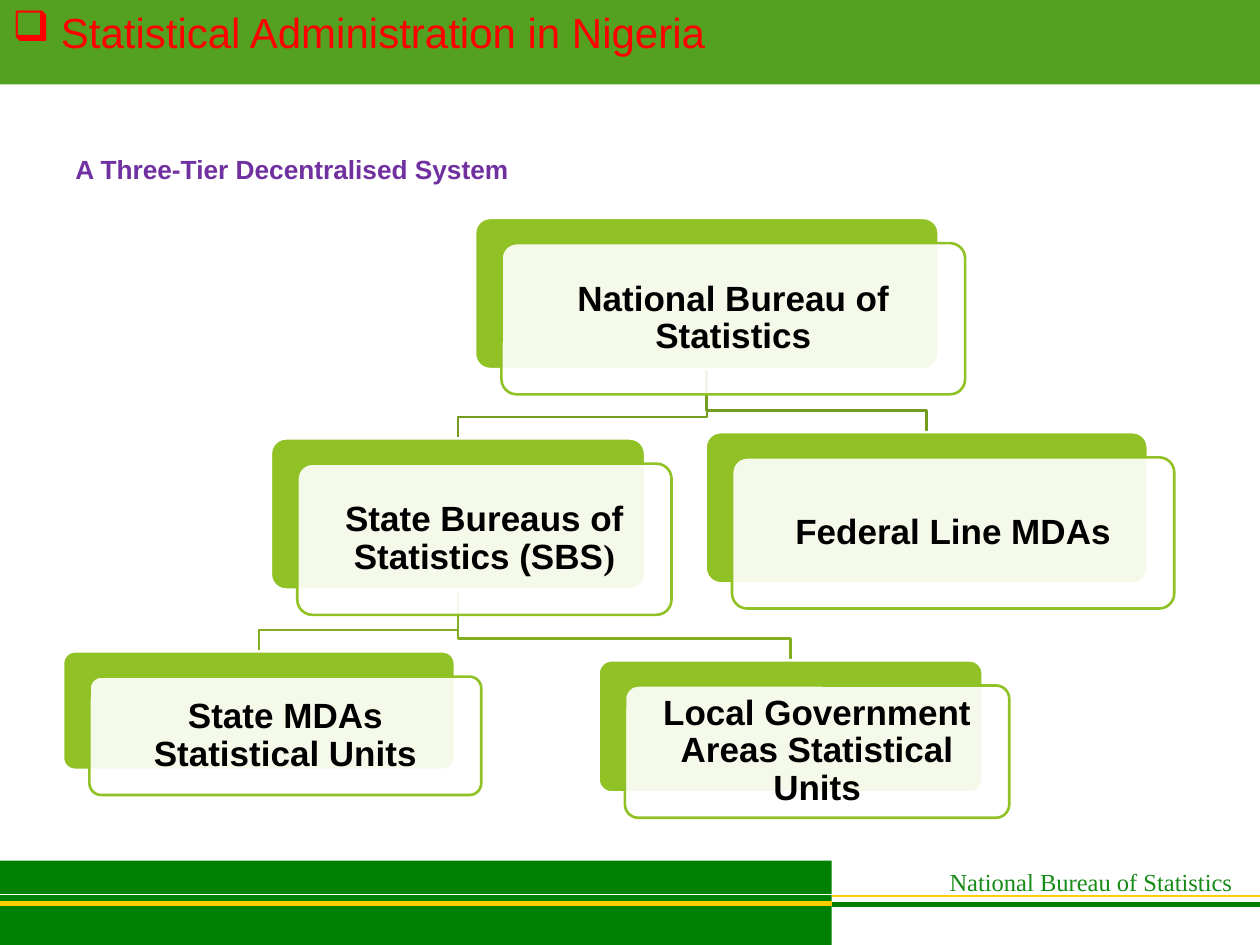
from dataclasses import dataclass

from lxml import etree
from pptx import Presentation
from pptx.dml.color import RGBColor
from pptx.enum.shapes import MSO_CONNECTOR, MSO_SHAPE
from pptx.enum.text import MSO_ANCHOR, PP_ALIGN
from pptx.oxml.ns import qn
from pptx.util import Inches, Pt

RECTANGLE = MSO_SHAPE.RECTANGLE
ROUNDED = MSO_SHAPE.ROUNDED_RECTANGLE
STRAIGHT = MSO_CONNECTOR.STRAIGHT
LEFT, CENTER = PP_ALIGN.LEFT, PP_ALIGN.CENTER
TOP, MIDDLE = MSO_ANCHOR.TOP, MSO_ANCHOR.MIDDLE

WHITE = RGBColor(0xFF, 0xFF, 0xFF)
BLACK = RGBColor(0x00, 0x00, 0x00)
RED = RGBColor(0xFF, 0x00, 0x00)
PURPLE = RGBColor(0x70, 0x30, 0xA0)
GOLD = RGBColor(0xFF, 0xCC, 0x00)
FOOTER_GREEN = RGBColor(0x00, 0x80, 0x00)
FOOTER_TEXT = RGBColor(0x17, 0x8B, 0x17)
TITLE_GREEN = RGBColor(0x54, 0xA0, 0x21)
CARD_GREEN = RGBColor(0x90, 0xC2, 0x26)
UPPER_LINK = RGBColor(0x73, 0x9B, 0x1E)
LOWER_LINK = RGBColor(0x83, 0xB0, 0x22)

CARD_SHIFT_X, CARD_SHIFT_Y = 0.21, 0.2
ELBOW_RISE = 0.17
CARD_INSET = Inches(0.08)


@dataclass(frozen=True)
class Card:
    left: float
    top: float
    width: float
    height: float
    runs: tuple[tuple[str, str], ...]

    @property
    def middle(self) -> float:
        return self.left + self.width / 2

    @property
    def bottom(self) -> float:
        return self.top + self.height


NATIONAL = Card(3.77, 1.73, 3.68, 1.2, (("National Bureau of Statistics", "Arial"),))
STATE = Card(2.15, 3.48, 2.97, 1.2,
             (("State Bureaus of Statistics (SBS", "Arial"), (")", "Times New Roman")))
STATE_UNITS = Card(0.5, 5.17, 3.11, 0.94, (("State MDAs Statistical Units", "Arial"),))
LOCAL_UNITS = Card(4.75, 5.24, 3.05, 1.05,
                   (("Local Government Areas Statistical Units", "Arial"),))
FEDERAL = Card(5.6, 3.43, 3.51, 1.2, (("Federal Line MDAs", "Arial"),))
CARDS = (NATIONAL, STATE, STATE_UNITS, LOCAL_UNITS, FEDERAL)
LINKS = (
    (NATIONAL, FEDERAL, UPPER_LINK),
    (STATE, LOCAL_UNITS, LOWER_LINK),
    (STATE, STATE_UNITS, LOWER_LINK),
    (NATIONAL, STATE, UPPER_LINK),
)


def add_block(slide, kind, left: float, top: float, width: float, height: float,
              fill: RGBColor, line: RGBColor | None = None):
    shape = slide.shapes.add_shape(kind, Inches(left), Inches(top),
                                   Inches(width), Inches(height))
    shape.shadow.inherit = False
    shape.fill.solid()
    shape.fill.fore_color.rgb = fill
    if line is None:
        shape.line.fill.background()
    else:
        shape.line.color.rgb = line
        shape.line.width = Pt(1.5)
    return shape


def write(paragraph, runs, size: int, color: RGBColor, bold: bool = False,
          alignment=LEFT) -> None:
    paragraph.alignment = alignment
    for text, font_name in runs:
        run = paragraph.add_run()
        run.text = text
        run.font.name = font_name
        run.font.size = Pt(size)
        run.font.bold = bold
        run.font.color.rgb = color


def add_rule(slide, start: float, end: float, y: float, color: RGBColor,
             width: int) -> None:
    rule = slide.shapes.add_connector(STRAIGHT, Inches(start), Inches(y),
                                      Inches(end), Inches(y))
    rule.line.color.rgb = color
    rule.line.width = Pt(width)
    etree.SubElement(rule._element.spPr, qn("a:effectLst"))


def add_label(slide, left: float, top: float, width: float, height: float):
    """Add a text box and return its first paragraph."""
    box = slide.shapes.add_textbox(Inches(left), Inches(top),
                                   Inches(width), Inches(height))
    box.text_frame.word_wrap = True
    return box.text_frame.paragraphs[0]


def add_footer(slide) -> None:
    add_block(slide, RECTANGLE, 0, 6.83, 6.6, 0.67, FOOTER_GREEN)
    add_rule(slide, 0, 6.6, 7.17, GOLD, 3)
    write(add_label(slide, 7.36, 6.83, 2.6, 0.14),
          [("National Bureau of Statistics", "Times New Roman")],
          14, FOOTER_TEXT, alignment=CENTER)
    add_rule(slide, 6.6, 10, 7.11, GOLD, 1)
    add_rule(slide, 6.6, 10, 7.18, FOOTER_GREEN, 3)
    add_rule(slide, 0, 6.6, 7.1, WHITE, 1)


def add_title(slide) -> None:
    bar = add_block(slide, RECTANGLE, 0, 0, 10, 0.67, TITLE_GREEN)
    bar.text_frame.vertical_anchor = TOP
    paragraph = bar.text_frame.paragraphs[0]
    properties = paragraph._p.get_or_add_pPr()
    properties.set("marL", str(Inches(0.3)))
    properties.set("indent", str(-Inches(0.3)))
    etree.SubElement(properties, qn("a:buChar"), char="❑")
    write(paragraph, [(" ", "Lato"), ("Statistical Administration in Nigeria", "Arial")],
          24, RED)


def add_link(slide, parent: Card, child: Card, color: RGBColor) -> None:
    """Draw the elbow from a parent's bottom to a child's top."""
    elbow = child.top - ELBOW_RISE
    builder = slide.shapes.build_freeform(Inches(parent.middle), Inches(parent.bottom))
    corners = ((parent.middle, elbow), (child.middle, elbow), (child.middle, child.top))
    builder.add_line_segments([(Inches(x), Inches(y)) for x, y in corners], close=False)
    link = builder.convert_to_shape()
    link.shadow.inherit = False
    link.fill.background()
    link.line.color.rgb = color
    link.line.width = Pt(1.5)


def add_card(slide, card: Card) -> None:
    """Draw a green plate with a translucent, labelled plate shifted over it."""
    back = add_block(slide, ROUNDED, card.left, card.top, card.width, card.height,
                     CARD_GREEN, WHITE)
    front = add_block(slide, ROUNDED, card.left + CARD_SHIFT_X, card.top + CARD_SHIFT_Y,
                      card.width, card.height, WHITE, CARD_GREEN)
    for plate in (back, front):
        plate.adjustments[0] = 0.1
    fill_color = front._element.spPr.find(qn("a:solidFill"))[0]
    etree.SubElement(fill_color, qn("a:alpha"), val="90000")

    frame = front.text_frame
    frame.word_wrap = True
    frame.vertical_anchor = MIDDLE
    frame.margin_left = frame.margin_right = CARD_INSET
    frame.margin_top = frame.margin_bottom = CARD_INSET
    paragraph = frame.paragraphs[0]
    paragraph.line_spacing = 0.9
    write(paragraph, card.runs, 20, BLACK, bold=True, alignment=CENTER)


def main() -> None:
    presentation = Presentation()
    presentation.slide_width = Inches(10)
    presentation.slide_height = Inches(7.5)
    slide = presentation.slides.add_slide(presentation.slide_layouts[6])

    add_footer(slide)
    add_title(slide)
    for parent, child, color in LINKS:
        add_link(slide, parent, child, color)
    for card in CARDS:
        add_card(slide, card)
    write(add_label(slide, 0.5, 1.17, 3.91, 0.35),
          [("A Three-Tier Decentralised System", "Arial")], 15, PURPLE, bold=True)

    presentation.save("out.pptx")


if __name__ == "__main__":
    main()
